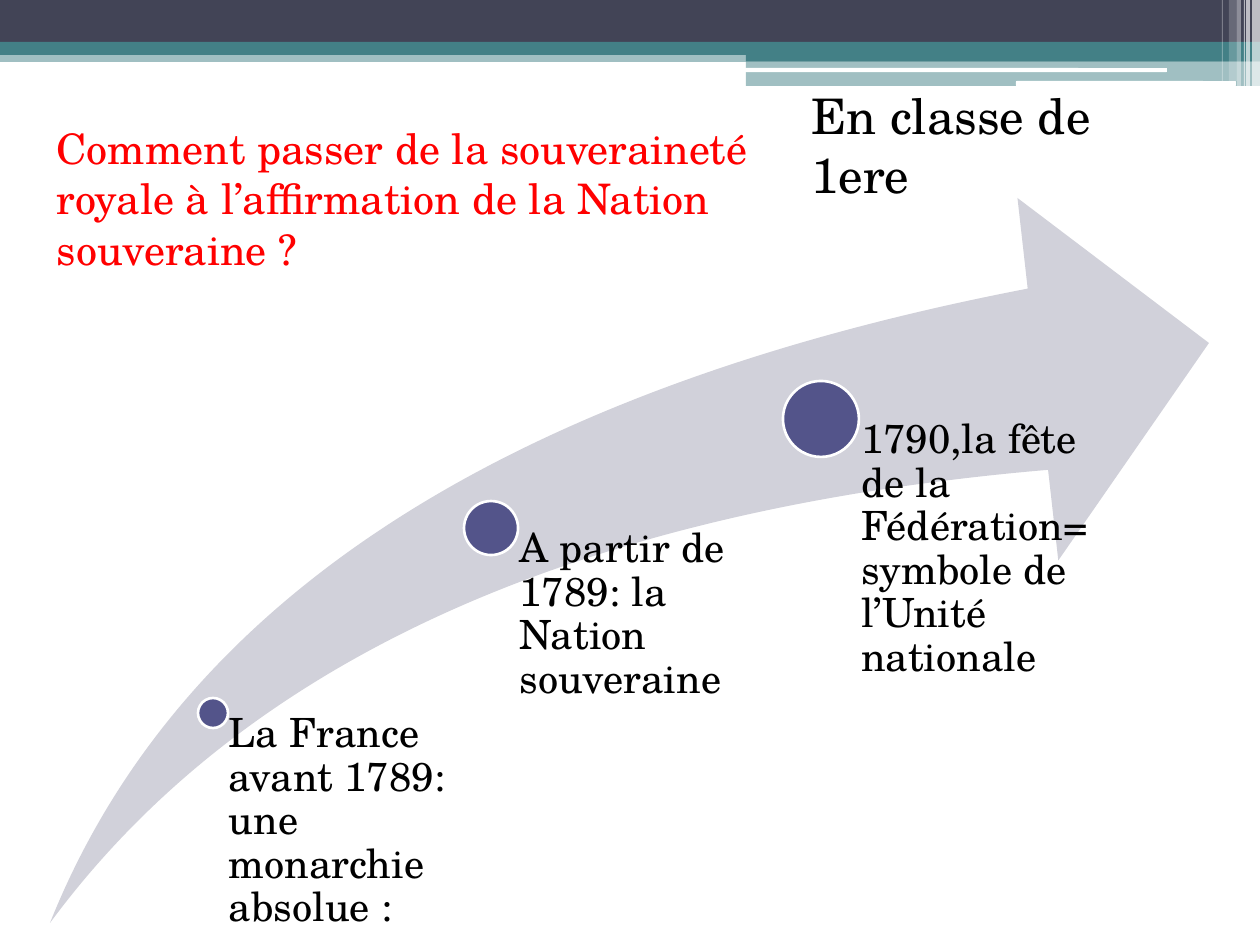
from dataclasses import dataclass
from typing import NamedTuple, Optional

from pptx import Presentation
from pptx import util as u
from pptx.dml.color import RGBColor
from pptx.enum import shapes, text
from pptx.oxml.ns import qn
from lxml import etree

EMU_PER_PX = 914400 / 126
SLIDE_W, SLIDE_H = 1260, 945


@dataclass(frozen=True)
class Theme:
    font: str = "TeX Gyre Schola"
    ink: str = "000000"
    question: str = "FF0000"
    white: str = "FFFFFF"
    slate: str = "424456"
    teal: str = "438086"
    arrow: str = "D1D1DA"
    dot: str = "53548A"
    question_size: int = 24
    level_size: int = 28
    step_size: int = 23


THEME = Theme()


class Box(NamedTuple):
    left: int
    top: int
    width: int
    height: int


class Band(NamedTuple):
    box: Box
    color: str
    opacity: int = 100
    kind: shapes.MSO_SHAPE = shapes.MSO_SHAPE.RECTANGLE


class Milestone(NamedTuple):
    center_x: int
    center_y: int
    diameter: int
    label_width: int
    label: str


def px(length: float) -> int:
    return round(length * EMU_PER_PX)


def place(shape, box: Box) -> None:
    for side, length in box._asdict().items():
        setattr(shape, side, px(length))


def add_filled(slide, kind, box: Box, color: str, opacity: int = 100,
               outline: Optional[str] = None):
    shape = slide.shapes.add_shape(kind, *map(px, box))
    shape.shadow.inherit = False
    shape.fill.solid()
    shape.fill.fore_color.rgb = RGBColor.from_string(color)
    if opacity < 100:
        rgb = shape.fill._xPr.find(qn("a:solidFill"))[0]
        etree.SubElement(rgb, qn("a:alpha"), val=str(opacity * 1000))
    if outline:
        shape.line.color.rgb = RGBColor.from_string(outline)
        shape.line.width = u.Pt(1.5)
    else:
        shape.line.fill.background()
    return shape


def write(shape, words: str, size: int, color: str, line_spacing: float = 1.0,
          **frame_format) -> None:
    frame = shape.text_frame
    frame.text = words
    frame_values = {"word_wrap": True, "auto_size": text.MSO_AUTO_SIZE.NONE,
                    "vertical_anchor": text.MSO_ANCHOR.TOP, **frame_format}
    for name, value in frame_values.items():
        setattr(frame, name, value)
    paragraph = frame.paragraphs[0]
    paragraph.alignment = text.PP_ALIGN.LEFT
    paragraph.line_spacing = line_spacing
    font = paragraph.runs[0].font
    for name, value in {"name": THEME.font, "size": u.Pt(size)}.items():
        setattr(font, name, value)
    font.color.rgb = RGBColor.from_string(color)


def add_label(slide, box: Box, words: str, size: int, **formatting) -> None:
    label = slide.shapes.add_textbox(*map(px, box))
    write(label, words, size, THEME.ink, **formatting)


def add_milestone(slide, step: Milestone, bottom: int) -> None:
    radius = step.diameter // 2
    dot = Box(step.center_x - radius, step.center_y - radius,
              step.diameter, step.diameter)
    add_filled(slide, shapes.MSO_SHAPE.OVAL, dot, THEME.dot, outline=THEME.white)
    label = Box(step.center_x, step.center_y, step.label_width,
                bottom - step.center_y)
    add_label(slide, label, step.label, THEME.step_size, line_spacing=0.9,
              margin_left=px(step.diameter * 0.53), margin_top=0,
              margin_right=0, margin_bottom=0)


ROUNDED = shapes.MSO_SHAPE.ROUNDED_RECTANGLE
HEADER = [
    Band(Box(0, 50, SLIDE_W, 12), THEME.teal, 50),
    Band(Box(0, 0, SLIDE_W, 42), THEME.slate),
    Band(Box(0, 42, SLIDE_W, 13), THEME.teal),
    Band(Box(746, 49, 514, 12), THEME.teal),
    Band(Box(746, 61, 514, 25), THEME.teal, 50),
    Band(Box(745, 68, 422, 4), THEME.white, kind=ROUNDED),
    Band(Box(1016, 81, 220, 5), THEME.white, kind=ROUNDED),
]
# Left, width, height and opacity of the pale stripes at the right edge
STRIPES = [(1252, 8, 86, 65), (1246, 4, 86, 65), (1244, 1, 86, 60),
           (1237, 4, 86, 40), (1229, 8, 81, 20), (1222, 1, 81, 30)]

ARROW = Box(50, 198, 1159, 725)
MILESTONES = [
    Milestone(213, 713, 30, 270, "La France avant 1789: une monarchie absolue :"),
    Milestone(491, 528, 54, 278, "A partir de 1789: la Nation souveraine"),
    Milestone(821, 419, 76, 278,
              "1790,la fête de la Fédération= symbole de l’Unité nationale"),
]


def main() -> None:
    deck = Presentation()
    deck.slide_width, deck.slide_height = px(SLIDE_W), px(SLIDE_H)
    slide = deck.slides.add_slide(deck.slide_layouts[5])

    # Header bands and stripes
    stripes = [Band(Box(left, 0, width, height), THEME.white, opacity)
               for left, width, height, opacity in STRIPES]
    for band in HEADER + stripes:
        add_filled(slide, band.kind, band.box, band.color, band.opacity)

    # Rising arrow with its milestones
    arrow = add_filled(slide, shapes.MSO_SHAPE.SWOOSH_ARROW, ARROW, THEME.arrow)
    arrow.adjustments[0] = arrow.adjustments[1] = 0.25
    for step in MILESTONES:
        add_milestone(slide, step, ARROW.top + ARROW.height)

    # Guiding question and class level
    question = slide.shapes.title
    place(question, Box(44, 116, 753, 165))
    write(question, "Comment passer de la souveraineté royale à l’affirmation "
          "de la Nation souveraine ?", THEME.question_size, THEME.question)
    add_label(slide, Box(799, 79, 397, 72), "En classe de 1ere", THEME.level_size)

    deck.save("out.pptx")


if __name__ == "__main__":
    main()
